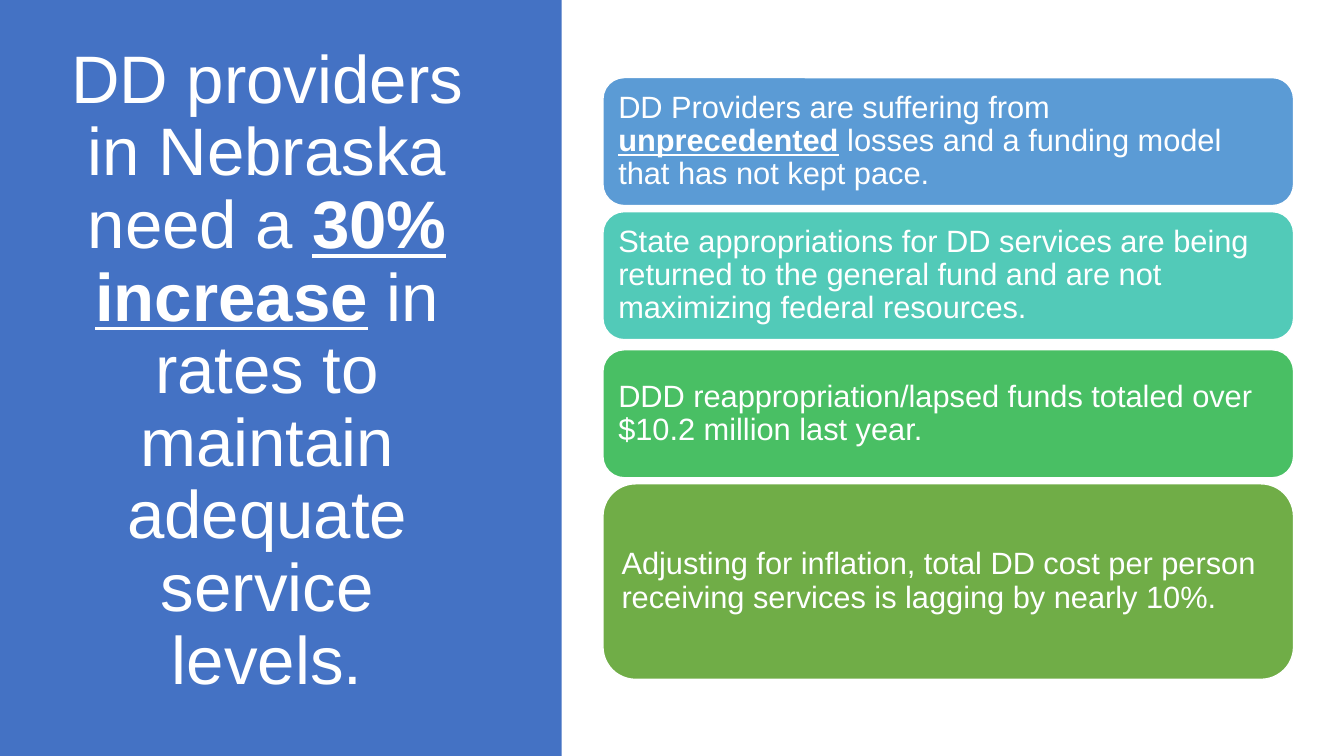
import pptx
import pptx.util
import pptx.dml.color
import pptx.enum.shapes
import pptx.enum.text
from dataclasses import dataclass

Inches = pptx.util.Inches
Pt = pptx.util.Pt
SHAPE = pptx.enum.shapes.MSO_SHAPE
ALIGN = pptx.enum.text.PP_ALIGN

# Each text is a list of (words, stressed) runs.
TITLE = [
    ("DD providers in Nebraska need a ", False),
    ("30% increase", True),
    (" in rates to maintain adequate service levels.", False),
]
# Each card: top, height, fill, text.
CARDS = [
    (0.77, 1.27, "5B9BD5", [
        ("DD Providers are suffering from ", False),
        ("unprecedented", True),
        (" losses and a funding model that has not kept pace.", False),
    ]),
    (2.1, 1.27, "52CAB8", [
        ("State appropriations for DD services are being returned to the "
         "general fund and are not maximizing federal resources.", False),
    ]),
    (3.47, 1.27, "49BF64", [
        ("DDD reappropriation/lapsed funds totaled over $10.2 million "
         "last year.", False),
    ]),
    (4.8, 1.94, "70AD47", [
        ("Adjusting for inflation, total DD cost per person receiving "
         "services is lagging by nearly 10%.", False),
    ]),
]
CARD_LEFT, CARD_WIDTH = 5.98, 6.85


@dataclass
class Theme:
    font: str = "Arial"
    white: str = "FFFFFF"
    panel: str = "4472C4"
    title: int = 48
    body: int = 22


theme = Theme()


def color(code):
    return pptx.dml.color.RGBColor.from_string(code)


def add_block(slide, kind, box, fill):
    block = slide.shapes.add_shape(kind, *map(Inches, box))
    block.shadow.inherit = False
    block.fill.solid()
    block.fill.fore_color.rgb = color(fill)
    block.line.fill.background()
    return block


def write(shape, runs, size, align, inset):
    """Fill the shape with one white paragraph, centred top to bottom."""
    frame = shape.text_frame
    frame.word_wrap = True
    frame.auto_size = pptx.enum.text.MSO_AUTO_SIZE.NONE
    frame.vertical_anchor = pptx.enum.text.MSO_ANCHOR.MIDDLE
    frame.margin_left = frame.margin_right = Inches(inset[0])
    frame.margin_top = frame.margin_bottom = Inches(inset[1])
    para = frame.paragraphs[0]
    para.alignment = align
    para.line_spacing = 0.9
    para.font.name = theme.font
    para.font.size = Pt(size)
    para.font.color.rgb = color(theme.white)
    for words, stressed in runs:
        run = para.add_run()
        run.text = words
        if stressed:
            run.font.bold = run.font.underline = True


def place_title(slide):
    title = slide.shapes.title
    title.left, title.top = Inches(0.57), Inches(0.68)
    title.width, title.height = Inches(4.16), Inches(6.02)
    write(title, TITLE, theme.title, ALIGN.CENTER, (0.1, 0.05))
    # Bring the title in front of the panel.
    title.element.getparent().append(title.element)


def add_card(slide, top, height, fill, runs):
    box = (CARD_LEFT, top, CARD_WIDTH, height)
    card = add_block(slide, SHAPE.ROUNDED_RECTANGLE, box, fill)
    card.line.color.rgb = color(theme.white)
    card.line.width = Pt(1)
    write(card, runs, theme.body, ALIGN.LEFT, (0.09, 0.09))


def main():
    deck = pptx.Presentation()
    deck.slide_width, deck.slide_height = Inches(13.33), Inches(7.5)
    slide = deck.slides.add_slide(deck.slide_layouts.get_by_name("Title Only"))
    add_block(slide, SHAPE.RECTANGLE, (0, 0, 5.57, 7.5), theme.panel)
    for card in CARDS:
        add_card(slide, *card)
    place_title(slide)
    deck.save("out.pptx")


if __name__ == "__main__":
    main()
